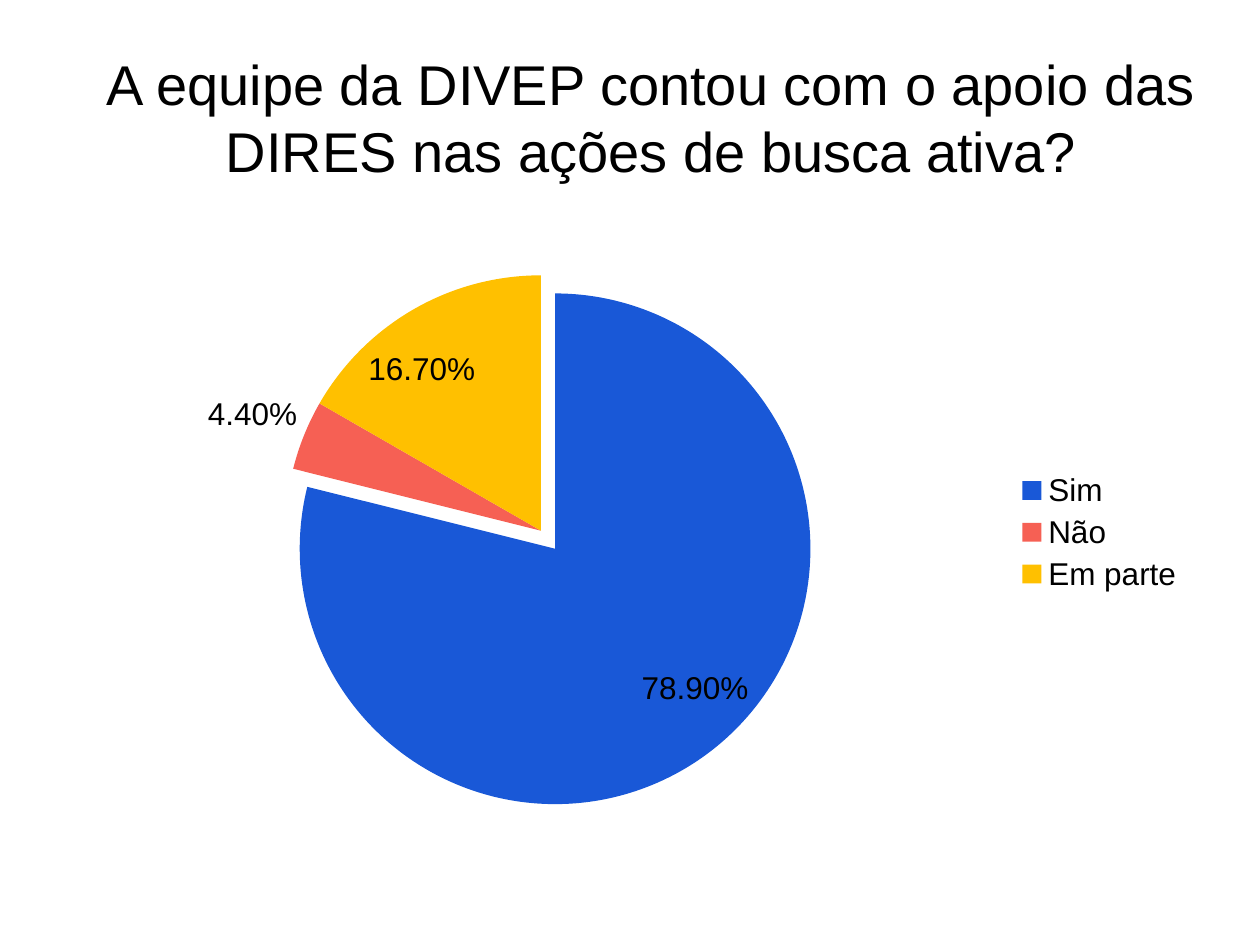
from lxml.etree import SubElement
from pptx import Presentation
from pptx.chart.data import CategoryChartData
from pptx.dml.color import RGBColor
from pptx.enum.chart import XL_CHART_TYPE, XL_LABEL_POSITION, XL_LEGEND_POSITION
from pptx.enum.text import MSO_ANCHOR, PP_ALIGN
from pptx.oxml.ns import qn
from pptx.util import Inches, Pt

FONT = "Arial"
COLORS = {"text": "000000", "Sim": "1958D7", "Não": "F66054", "Em parte": "FFC000"}
ANSWERS = {"Sim": 0.789, "Não": 0.044, "Em parte": 0.167}
PLOT_LAYOUT = {"x": 0.065, "y": 0.088, "w": 0.713, "h": 0.819}


def style_font(font, size):
    font.name = FONT
    font.size = Pt(size)
    font.color.rgb = RGBColor.from_string(COLORS["text"])


def add_title(slide, text):
    shape = slide.shapes.add_textbox(Inches(0.5), Inches(0.3), Inches(9.34), Inches(1.25))
    frame = shape.text_frame
    frame.word_wrap = True
    frame.vertical_anchor = MSO_ANCHOR.MIDDLE
    paragraph = frame.paragraphs[0]
    paragraph.alignment = PP_ALIGN.CENTER
    run = paragraph.add_run()
    run.text = text
    style_font(run.font, 32)


def place_plot(chart):
    plot_area = chart.plots[0]._element.getparent()
    layout = plot_area.find(qn("c:layout"))
    if layout is None:
        layout = SubElement(plot_area, qn("c:layout"))
        plot_area.insert(0, layout)
    manual = SubElement(layout, qn("c:manualLayout"))
    settings = {"layoutTarget": "inner", "xMode": "edge", "yMode": "edge", **PLOT_LAYOUT}
    for name, value in settings.items():
        SubElement(manual, qn(f"c:{name}")).set("val", str(value))


def explode_point(series, index, percent):
    point = series._element.findall(qn("c:dPt"))[index]
    explosion = SubElement(point, qn("c:explosion"))
    explosion.set("val", str(percent))
    point.find(qn("c:spPr")).addprevious(explosion)


def add_answer_pie(slide):
    data = CategoryChartData(number_format="0.00%")
    data.categories = list(ANSWERS)
    data.add_series("Series 1", list(ANSWERS.values()))
    chart = slide.shapes.add_chart(
        XL_CHART_TYPE.PIE, Inches(0.5), Inches(1.75), Inches(9), Inches(4.95), data
    ).chart
    style_font(chart.font, 18)
    chart.has_title = False
    chart.has_legend = True
    chart.legend.position = XL_LEGEND_POSITION.RIGHT
    chart.legend.include_in_layout = False
    style_font(chart.legend.font, 18)

    plot = chart.plots[0]
    plot.vary_by_categories = True
    series = plot.series[0]
    for index, answer in enumerate(ANSWERS):
        fill = series.points[index].format.fill
        fill.solid()
        fill.fore_color.rgb = RGBColor.from_string(COLORS[answer])
    explode_point(series, 0, 9)

    labels = series.data_labels
    labels.show_value = True
    labels.show_percentage = False
    labels.number_format = "0.00%"
    labels.number_format_is_linked = False
    labels.position = XL_LABEL_POSITION.BEST_FIT
    style_font(labels.font, 18)
    place_plot(chart)


def main():
    presentation = Presentation()
    presentation.slide_width = Inches(10)
    presentation.slide_height = Inches(7.5)
    slide = presentation.slides.add_slide(presentation.slide_layouts[6])
    add_title(slide, "A equipe da DIVEP contou com o apoio das DIRES nas ações de busca ativa?")
    add_answer_pie(slide)
    presentation.save("out.pptx")


if __name__ == "__main__":
    main()
